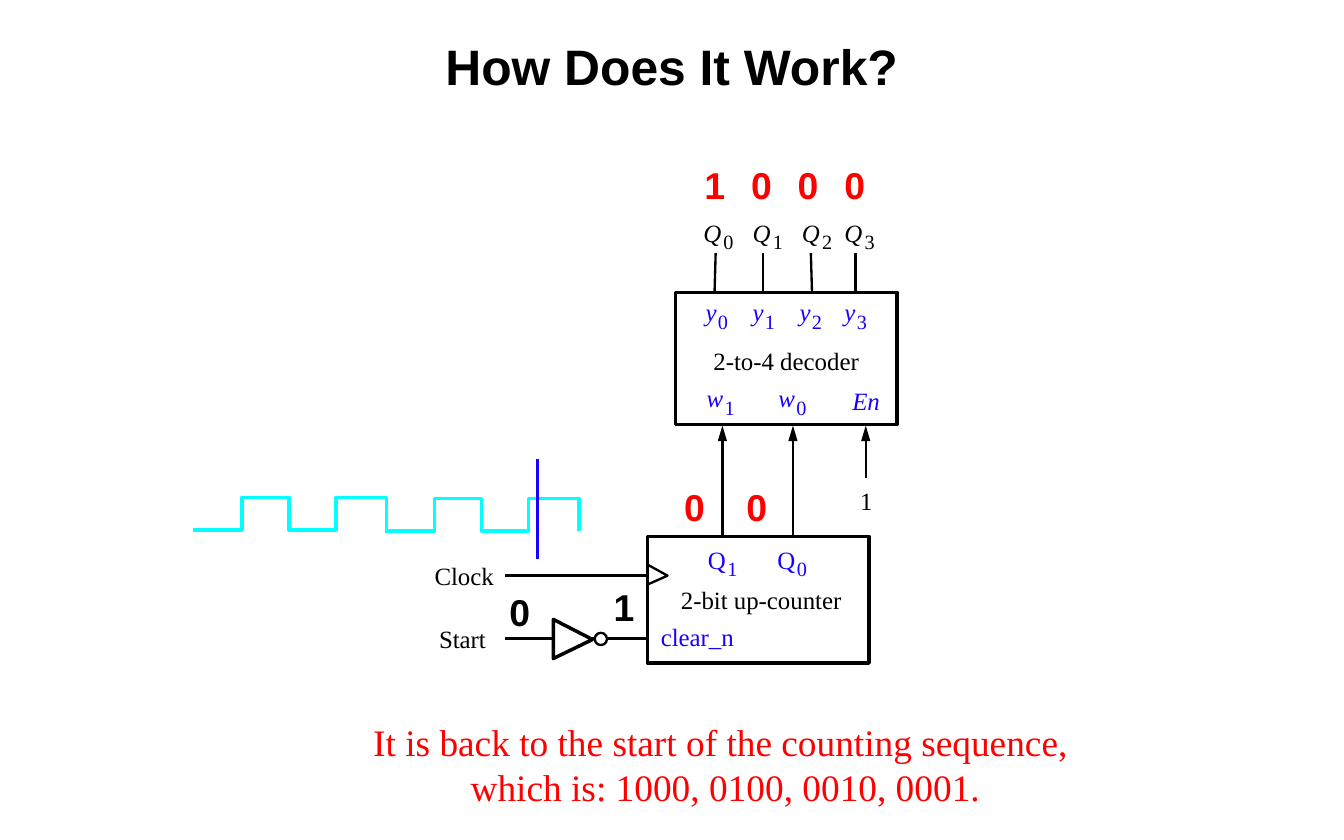
from lxml import etree
from pptx import Presentation
from pptx.dml.color import RGBColor
from pptx.enum.shapes import MSO_CONNECTOR, MSO_SHAPE
from pptx.enum.text import MSO_ANCHOR, MSO_AUTO_SIZE, PP_ALIGN
from pptx.oxml.ns import qn
from pptx.util import Inches, Pt

STRAIGHT = MSO_CONNECTOR.STRAIGHT
RECTANGLE, OVAL = MSO_SHAPE.RECTANGLE, MSO_SHAPE.OVAL
CENTER, MIDDLE = PP_ALIGN.CENTER, MSO_ANCHOR.MIDDLE
GROW = MSO_AUTO_SIZE.SHAPE_TO_FIT_TEXT

# Grid: 10 columns and 10 rows to the inch
WIDTH, HEIGHT = Inches(12), Inches(7.5)
COLUMNS, ROWS = 120, 75

SERIF, SANS = "Times New Roman", "Arial"
THEME = {
    "ink": "000000", "port": "1700FF", "value": "FF0000",
    "wave": "00FFFF", "paper": "FFFFFF",
    "thin": 1.5, "thick": 2.25,
    "title": {"name": SANS, "size": Pt(32), "bold": True},
    "digit": {"name": SANS, "size": Pt(24), "bold": True},
    "caption": {"name": SERIF, "size": Pt(24)},
    "label": {"name": SERIF, "size": Pt(16)},
    "variable": {"name": SERIF, "size": Pt(16), "italic": True},
    "index": {"name": SERIF, "size": Pt(13)},
}


def col(n):
    return round(WIDTH * n / COLUMNS)


def row(n):
    return round(HEIGHT * n / ROWS)


def place(x, y, w, h):
    return col(x), row(y), col(w), row(h)


def color(role):
    return RGBColor.from_string(THEME[role])


def outline(shape, weight="thin", role="ink", fill=None):
    shape.shadow.inherit = False
    shape.line.color.rgb = color(role)
    shape.line.width = Pt(THEME[weight])
    if fill:
        shape.fill.solid()
        shape.fill.fore_color.rgb = color(fill)
    else:
        shape.fill.background()


def preset(slide, kind, box, weight="thin", fill=None):
    outline(slide.shapes.add_shape(kind, *place(*box)), weight, fill=fill)


def polyline(slide, points, weight="thin", role="ink", close=False, fill=None):
    corners = [(col(x), row(y)) for x, y in points]
    builder = slide.shapes.build_freeform(*corners[0], scale=1.0)
    builder.add_line_segments(corners[1:], close=close)
    outline(builder.convert_to_shape(), weight, role, fill)


def wire(slide, start, end, role="ink", arrow=False):
    line = slide.shapes.add_connector(
        STRAIGHT, col(start[0]), row(start[1]), col(end[0]), row(end[1]))
    line.line.color.rgb = color(role)
    line.line.width = Pt(THEME["thin"])
    properties = line.line._get_or_add_ln()
    if arrow:
        etree.SubElement(properties, qn("a:tailEnd"),
                         type="triangle", w="med", len="lg")
    etree.SubElement(properties.getparent(), qn("a:effectLst"))


def write(slide, lines, box, style, role="ink", inset=True, wrap=False,
          align=None, anchor=None, tab=None):
    frame = slide.shapes.add_textbox(*place(*box)).text_frame
    settings = {"word_wrap": wrap, "auto_size": GROW}
    if anchor is not None:
        settings = {"word_wrap": wrap, "vertical_anchor": anchor}
    if not inset:
        settings.update(dict.fromkeys(
            ("margin_left", "margin_top", "margin_right", "margin_bottom"), 0))
    for key, value in settings.items():
        setattr(frame, key, value)
    for i, text in enumerate(lines):
        paragraph = frame.add_paragraph() if i else frame.paragraphs[0]
        paragraph.alignment = align
        run = paragraph.add_run()
        run.text = text
        for key, value in THEME[style].items():
            setattr(run.font, key, value)
        run.font.color.rgb = color(role)
        if tab:
            stops = etree.SubElement(
                paragraph._p.get_or_add_pPr(), qn("a:tabLst"))
            for n in range(1, text.count("\t") + 1):
                etree.SubElement(stops, qn("a:tab"),
                                 pos=str(col(tab * n)), algn="l")


def label(slide, text, x, y, w, style="label", role="ink"):
    write(slide, [text], (x, y, w, 2.7), style, role, inset=False)


def symbol(slide, letter, index, x, y, w, gap, style="variable", role="port"):
    label(slide, letter, x, y, w, style, role)
    write(slide, [str(index)], (x + gap, y + 1.1, 1.4, 2.2), "index", role,
          inset=False)


def digits(slide, values, box, pitch):
    write(slide, ["\t".join(values)], box, "digit", "value", wrap=True, tab=pitch)


def decoder(slide):
    preset(slide, RECTANGLE, (60.3, 26.1, 19.8, 11.8), "thick")
    label(slide, "2-to-4 decoder", 63.7, 30.9, 13.1)
    # Outputs, each with its own wire and name
    output_x = (63, 67.2, 71.4, 75.4)
    name_x = (62.8, 67.2, 71.6, 75.4)
    wire_x = ((63.8, 63.9), (68.1, 68.1), (72.5, 72.4), (76.4, 76.4))
    for i, (x, name, (bottom, top)) in enumerate(zip(output_x, name_x, wire_x)):
        symbol(slide, "y", i, x, 26.5, 1.7, 1.1)
        symbol(slide, "Q", i, name, 19.4, 2.2, 1.8, role="ink")
        wire(slide, (bottom, 26.1), (top, 22.6))
    # Inputs
    for index, x in ((1, 63.1), (0, 69.5)):
        symbol(slide, "w", index, x, 34.2, 2.2, 1.6)
    label(slide, "En", 76.1, 34.4, 2.5, "variable", "port")
    label(slide, "1", 76.8, 43.4, 1.7)
    for x, start in ((64.5, 48), (70.8, 48), (77.3, 42.7)):
        wire(slide, (x, start), (x, 38), arrow=True)


def counter(slide):
    preset(slide, RECTANGLE, (57.8, 47.9, 19.8, 11.3), "thick")
    polyline(slide, [(57.8, 52.2), (59.6, 51.4), (57.8, 50.4)])
    label(slide, "2-bit up-counter", 60.8, 52.2, 14.6)
    label(slide, "clear_n", 59, 55.5, 7.2, role="port")
    for index, x in ((1, 63.2), (0, 69.4)):
        symbol(slide, "Q", index, x, 48.6, 2.2, 1.75, style="label")


def control_inputs(slide):
    for y in (51.4, 57):
        wire(slide, (45.1, y), (57.8, y))
    label(slide, "Clock", 38.8, 50.1, 5.3)
    label(slide, "Start", 39.2, 55.7, 4.3)
    # Inverter
    polyline(slide, [(52.9, 57.1), (49.4, 58.8), (49.4, 55.3)],
             "thick", close=True, fill="paper")
    preset(slide, OVAL, (53.1, 56.5, 1.1, 1.1), fill="paper")


def clock_wave(slide, left, low):
    high = low - 2.9
    edges = [left + step for step in (0, 4.4, 8.6, 12.8, 17.3)]
    points = [(edges[0], low)]
    for i, x in enumerate(edges[1:]):
        levels = (high, low) if i % 2 else (low, high)
        points += [(x, y) for y in levels]
    polyline(slide, points, "thick", "wave")


def main():
    deck = Presentation()
    deck.slide_width, deck.slide_height = WIDTH, HEIGHT
    slide = deck.slides.add_slide(deck.slide_layouts[6])

    # Circuit
    counter(slide)
    decoder(slide)
    control_inputs(slide)

    # Title and signal values
    write(slide, ["How Does It Work?"], (10, 2.5, 100, 6.7), "title",
          wrap=True, align=CENTER, anchor=MIDDLE)
    digits(slide, "00", (60.1, 42.7, 9.6, 5.1), 5.56)
    digits(slide, "1000", (61.9, 14, 21.9, 5), 4.17)
    for value, x, y in (("0", 44.5, 52.1), ("1", 53.8, 51.7)):
        write(slide, [value], (x, y, 3.9, 5), "digit")

    # Clock signal with the current moment
    for left, low in ((17.2, 47.3), (34.4, 47.4)):
        clock_wave(slide, left, low)
    wire(slide, (48, 49.9), (48, 41), "port")

    # Caption
    write(slide, ["It is back to the start of the counting sequence, ",
                  "which is: 1000, 0100, 0010, 0001."],
          (31.6, 63.7, 66.3, 9.1), "caption", "value", align=CENTER)
    deck.save("out.pptx")


if __name__ == "__main__":
    main()
